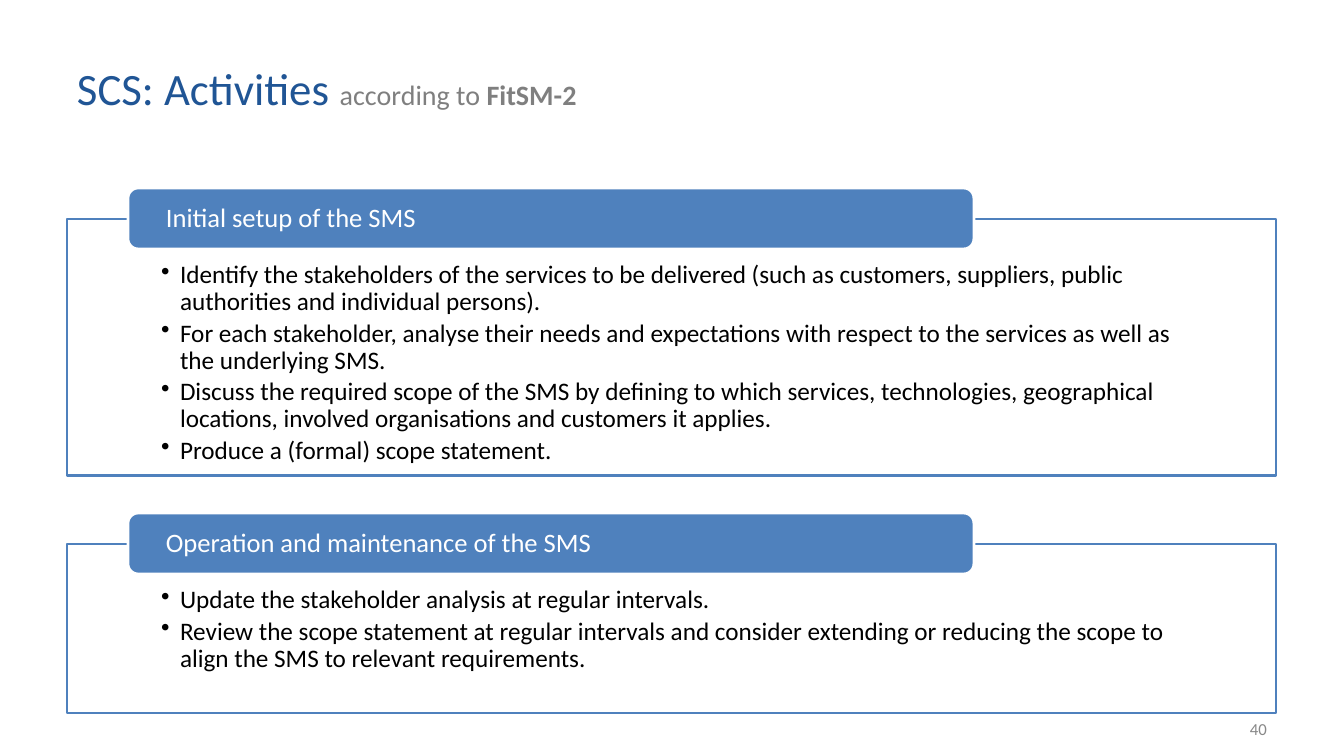
from lxml import etree
from pptx import Presentation, util as u
from pptx.dml.color import RGBColor
from pptx.enum import shapes, text
from pptx.oxml.ns import qn

NAVY = RGBColor(0x20, 0x55, 0x95)
BLUE = RGBColor(0x4F, 0x81, 0xBD)
GREY = RGBColor(0x7F, 0x7F, 0x7F)
PALE = RGBColor(0x88, 0x88, 0x88)
WHITE = RGBColor(0xFF, 0xFF, 0xFF)
BLACK = RGBColor(0x00, 0x00, 0x00)

MID = text.MSO_ANCHOR.MIDDLE
LEFT, RIGHT = text.PP_ALIGN.LEFT, text.PP_ALIGN.RIGHT


def px(*nums):
    return [round(n * u.Inches(1) / 100.8) for n in nums]


def write(shape, paras, pad, anchor, align=LEFT, lead=1.0, bullet=False):
    """Fill a shape with paragraphs, each a list of (words, size, colour, bold)."""
    frame = shape.text_frame
    sides = zip(("left", "top", "right", "bottom"), px(*pad))
    look = {"margin_" + side: gap for side, gap in sides}
    look |= {"word_wrap": True, "vertical_anchor": anchor}
    for key, val in look.items():
        setattr(frame, key, val)
    for i, runs in enumerate(paras):
        para = frame.add_paragraph() if i else frame.paragraphs[0]
        if bullet:
            para.level = 1
            props = para._p.get_or_add_pPr()
            dent = px(19)[0]
            props.set("marL", str(dent))
            props.set("indent", str(-dent))
            tint = etree.SubElement(props, qn("a:buClr"))
            etree.SubElement(tint, qn("a:srgbClr"), val=str(BLACK))
            etree.SubElement(props, qn("a:buChar"), char="•")
            para.space_before = u.Pt(2.9 if i else 0)
        para.alignment = align
        para.line_spacing = lead
        for words, size, hue, bold in runs:
            run = para.add_run()
            run.text = words
            font = run.font
            style = {"name": "Calibri", "size": u.Pt(size), "bold": bold}
            for key, val in style.items():
                setattr(font, key, val)
            font.color.rgb = hue


deck = Presentation()
deck.slide_width, deck.slide_height = px(1344, 756)
slide = deck.slides.add_slide(deck.slide_layouts[6])

# Title
title = slide.shapes.add_textbox(*px(67, 30, 998, 115))
write(title, [[("SCS: Activities ", 32, NAVY, False),
               ("according to ", 20, GREY, False),
               ("FitSM-2", 20, GREY, True)]], (10, 5, 10, 5), MID)

# Activity groups: top, height, heading, bullets
groups = [
    (219, 257, "Initial setup of the SMS", [
        "Identify the stakeholders of the services to be delivered (such as "
        "customers, suppliers, public authorities and individual persons).",
        "For each stakeholder, analyse their needs and expectations with "
        "respect to the services as well as the underlying SMS.",
        "Discuss the required scope of the SMS by defining to which services, "
        "technologies, geographical locations, involved organisations and "
        "customers it applies.",
        "Produce a (formal) scope statement.",
    ]),
    (544, 169, "Operation and maintenance of the SMS", [
        "Update the stakeholder analysis at regular intervals.",
        "Review the scope statement at regular intervals and consider "
        "extending or reducing the scope to align the SMS to relevant "
        "requirements.",
    ]),
]
kinds = shapes.MSO_SHAPE
for top, high, head, items in groups:
    box = slide.shapes.add_shape(kinds.RECTANGLE, *px(67, top, 1209, high))
    tab = slide.shapes.add_shape(kinds.ROUNDED_RECTANGLE,
                                 *px(128, top - 31, 846, 61))
    tab.adjustments[0] = 0.167
    for shape, fill, edge in ((box, WHITE, BLUE), (tab, BLUE, WHITE)):
        shape.shadow.inherit = False
        shape.fill.solid()
        shape.fill.fore_color.rgb = fill
        shape.line.color.rgb = edge
        shape.line.width = u.Pt(2)

    # Slightly clear panel
    tone = box._element.spPr.find(qn("a:solidFill"))[0]
    etree.SubElement(tone, qn("a:alpha"), val="90000")

    write(box, [[(item, 18, BLACK, False)] for item in items],
          (94, 43, 94, 15), text.MSO_ANCHOR.TOP, lead=0.9, bullet=True)
    write(tab, [[(head, 19, WHITE, False)]], (35, 0, 35, 0), MID, lead=0.9)

# Page number
page = slide.shapes.add_textbox(*px(964, 709, 313, 39))
write(page, [[("40", 12, PALE, False)]], (10, 5, 10, 5), MID, RIGHT)

deck.save("out.pptx")
